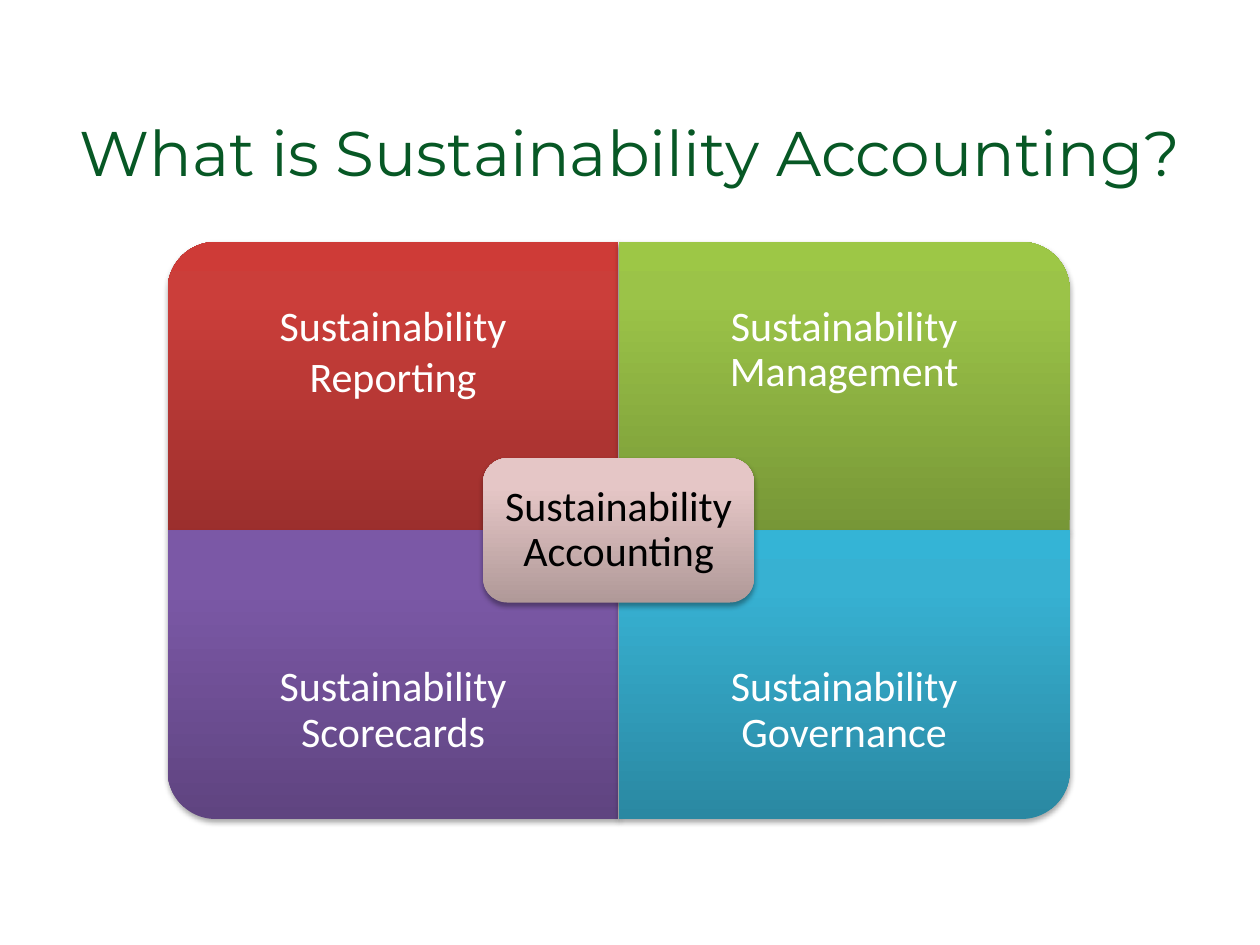
from dataclasses import dataclass
from lxml.etree import fromstring
from pptx import Presentation
from pptx.dml.color import RGBColor
from pptx.enum.shapes import MSO_SHAPE
from pptx.enum.text import MSO_ANCHOR, PP_ALIGN
from pptx.oxml.ns import nsdecls
from pptx.util import Inches, Pt


@dataclass(frozen=True)
class Theme:
    title: str = "075825"
    light: str = "FFFFFF"
    dark: str = "000000"
    red: tuple = ("9C2F2D", "CB3E3A", "CE3B37")
    green: tuple = ("779737", "9BC348", "9DC746")
    purple: tuple = ("5F4480", "7B58A6", "7C57A8")
    blue: tuple = ("2A88A2", "37B1D2", "34B4D6")
    pink: tuple = ("B09998", "E5C6C6", "E6C7C6")
    head: int = 36
    body: int = 24
    head_font: str = "Montserrat"
    body_font: str = "Calibri"


theme = Theme()


def write(frame, text, size=theme.body, font=theme.body_font,
          color=theme.light, inset=0.19, line=0.9):
    frame.word_wrap = True
    frame.vertical_anchor = MSO_ANCHOR.MIDDLE
    frame.margin_left = frame.margin_right = Inches(inset)
    frame.margin_top = frame.margin_bottom = Inches(inset)
    frame.text = text
    for para in frame.paragraphs:
        para.alignment = PP_ALIGN.CENTER
        para.line_spacing = line
        para.font.size = Pt(size)
        para.font.name = font
        para.font.color.rgb = RGBColor.from_string(color)


def block(kind, mid_x, mid_y, wide, high, tones, turn=0):
    if turn % 180:
        wide, high = high, wide
    shape = slide.shapes.add_shape(
        kind, Inches(mid_x - wide / 2), Inches(mid_y - high / 2),
        Inches(wide), Inches(high))
    shape.rotation = turn
    shape.line.fill.background()
    stops = "".join(
        f'<a:gs pos="{pos}000"><a:srgbClr val="{tone}"/></a:gs>'
        for pos, tone in zip((0, 80, 100), tones))
    fill = fromstring(
        f'<a:gradFill {nsdecls("a")} rotWithShape="0"><a:gsLst>{stops}</a:gsLst>'
        '<a:lin ang="16200000" scaled="0"/></a:gradFill>')
    glow = fromstring(
        f'<a:effectLst {nsdecls("a")}><a:outerShdw blurRad="{Pt(3.1)}" '
        f'dist="{Pt(1.8)}" dir="5400000" rotWithShape="0">'
        f'<a:srgbClr val="{theme.dark}"><a:alpha val="35000"/></a:srgbClr>'
        '</a:outerShdw></a:effectLst>')
    props = shape.element.spPr
    props.insert(2, fill)
    props.append(glow)
    return shape


deck = Presentation()
deck.slide_width, deck.slide_height = Inches(10), Inches(7.5)
slide = deck.slides.add_slide(deck.slide_layouts[5])

title = slide.shapes.title
title.left, title.top = Inches(0.5), Inches(0.58)
title.width, title.height = Inches(9), Inches(1.25)
write(title.text_frame, "What is Sustainability Accounting?", size=theme.head,
      font=theme.head_font, color=theme.title, inset=0.05, line=1)

left, top, wide, high = 1.33, 1.92, 3.58, 2.29
cells = [
    (0, 0, 270, theme.red, "Sustainability\nReporting", 1),
    (1, 0, 0, theme.green, "Sustainability Management", 0.9),
    (0, 1, 180, theme.purple, "Sustainability Scorecards", 0.9),
    (1, 1, 90, theme.blue, "Sustainability Governance", 0.9),
]
for col, row, turn, tones, text, line in cells:
    block(MSO_SHAPE.ROUND_1_RECTANGLE, left + (col + 0.5) * wide,
          top + (row + 0.5) * high, wide, high, tones, turn)
    label = slide.shapes.add_textbox(
        Inches(left + col * wide), Inches(top + row * 1.25 * high),
        Inches(wide), Inches(0.75 * high))
    write(label.text_frame, text, line=line)

hub = block(MSO_SHAPE.ROUNDED_RECTANGLE, left + wide, top + high,
            0.6 * wide, 0.5 * high, theme.pink)
write(hub.text_frame, "Sustainability Accounting", color=theme.dark, inset=0.1)

deck.save("out.pptx")
